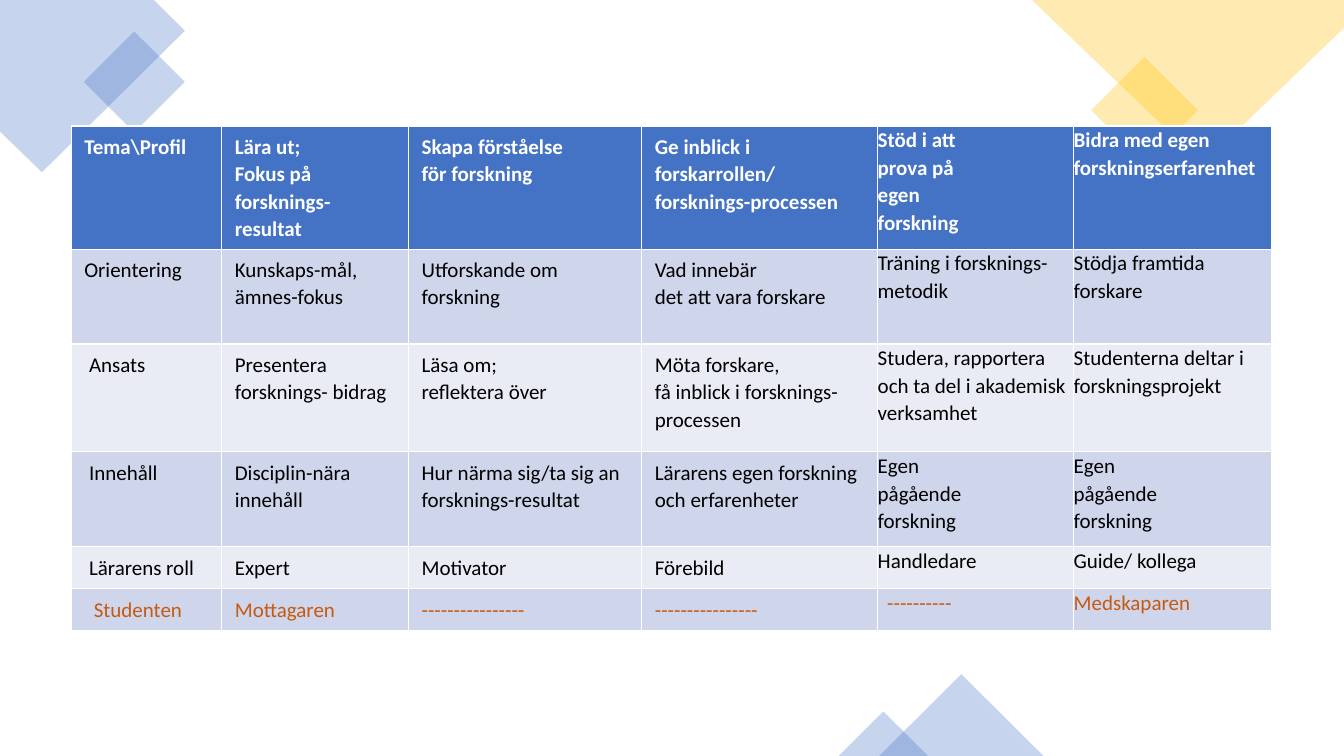
"""Build a slide with a teaching and research profile table and corner shapes."""
from lxml import etree
from pptx import Presentation
from pptx.dml.color import RGBColor
from pptx.enum.shapes import MSO_SHAPE
from pptx.oxml.ns import qn
from pptx.util import Pt

COLORS = {"blue": "4472C4", "gold": "FFC000", "band": "CFD5EA", "light": "E9EBF5",
          "white": "FFFFFF", "black": "000000", "orange": "C55A11"}


def rgb(name):
    return RGBColor.from_string(COLORS[name])


def tint(sp, color):
    sp.shadow.inherit = False
    sp.line.fill.background()
    sp.fill.solid()
    sp.fill.fore_color.rgb = rgb(color)
    clr = sp.fill._xPr.find(qn("a:solidFill"))[0]
    etree.SubElement(clr, qn("a:alpha")).set("val", "30000")


prs = Presentation()
prs.slide_width, prs.slide_height = Pt(960), Pt(540)
s = prs.slides.add_slide(prs.slide_layouts[6])

corners = [
    ("blue", [(0, 0), (110.2, 0), (131.8, 21.6), (29.5, 123.1), (0, 93.6)]),
    ("gold", [(736.6, 0), (960, 0), (960, 20.2), (859, 116.6)]),
]
for color, points in corners:
    builder = s.shapes.build_freeform(*points[0], scale=Pt(1))
    builder.add_line_segments(points[1:], close=True)
    tint(builder.convert_to_shape(), color)

accents = [
    (MSO_SHAPE.RECTANGLE, 70.4, 33, 51, 51, 315, "blue"),
    (MSO_SHAPE.RECTANGLE, 790.6, 51.8, 54, 54, 315, "gold"),
    (MSO_SHAPE.ISOSCELES_TRIANGLE, 628, 481.6, 117.4, 58.4, 0, "blue"),
    (MSO_SHAPE.ISOSCELES_TRIANGLE, 599, 508.2, 64, 31.8, 0, "blue"),
]
for kind, x, y, w, h, angle, color in accents:
    sp = s.shapes.add_shape(kind, Pt(x), Pt(y), Pt(w), Pt(h))
    sp.rotation = angle
    tint(sp, color)

rows = [
    ["Tema\\Profil", "Lära ut; \vFokus på forsknings-resultat",
     "Skapa förståelse \vför forskning",
     "Ge inblick i forskarrollen/\vforsknings-processen",
     "Stöd i att\vprova på \vegen \vforskning",
     "Bidra med egen forskningserfarenhet"],
    ["Orientering", "Kunskaps-mål, ämnes-fokus", "Utforskande om forskning",
     "Vad innebär \vdet att vara forskare", "Träning i forsknings-metodik",
     "Stödja framtida forskare"],
    ["Ansats", "Presentera forsknings- bidrag", "Läsa om; \vreflektera över",
     "Möta forskare, \vfå inblick i forsknings-processen",
     "Studera, rapportera och ta del i akademisk verksamhet",
     "Studenterna deltar i forskningsprojekt"],
    ["Innehåll", "Disciplin-nära innehåll",
     "Hur närma sig/ta sig an forsknings-resultat",
     "Lärarens egen forskning och erfarenheter",
     "Egen\vpågående\vforskning", "Egen\vpågående\vforskning"],
    ["Lärarens roll", "Expert", "Motivator", "Förebild", "Handledare",
     "Guide/ kollega"],
    ["Studenten", "Mottagaren", "-" * 16, "-" * 16, "-" * 10, "Medskaparen"],
]
col_widths = [107.6, 133.4, 166.6, 168.6, 140, 141.4]
row_heights = [87.2, 67.8, 77, 67.8, 30, 30]
indents = {(2, 0): 3.4, (3, 0): 3.4, (4, 0): 3.4, (5, 0): 6.8, (5, 4): 6.8}

frame = s.shapes.add_table(len(rows), len(col_widths), Pt(50.8), Pt(90),
                           Pt(sum(col_widths)), Pt(sum(row_heights)))
table = frame.table
for column, width in zip(table.columns, col_widths):
    column.width = Pt(width)
for row, height in zip(table.rows, row_heights):
    row.height = Pt(height)

for i, row in enumerate(rows):
    fill = "blue" if i == 0 else "band" if i % 2 else "light"
    ink = {0: "white", 5: "orange"}.get(i, "black")
    for j, words in enumerate(row):
        cell = table.cell(i, j)
        cell.fill.solid()
        cell.fill.fore_color.rgb = rgb(fill)
        side, edge = (9.4, 4.7) if j < 4 else (0, 0)
        margins = {"margin_left": side + indents.get((i, j), 0), "margin_right": side,
                   "margin_top": edge, "margin_bottom": edge}
        for name, value in margins.items():
            setattr(cell, name, Pt(value))
        p = cell.text_frame.paragraphs[0]
        p.text = words
        p.line_spacing = 1.07
        p.space_after = Pt(8)
        for r in p.runs:
            for name, value in {"name": "Calibri", "size": Pt(15), "bold": i == 0}.items():
                setattr(r.font, name, value)
            r.font.color.rgb = rgb(ink)

prs.save("out.pptx")
